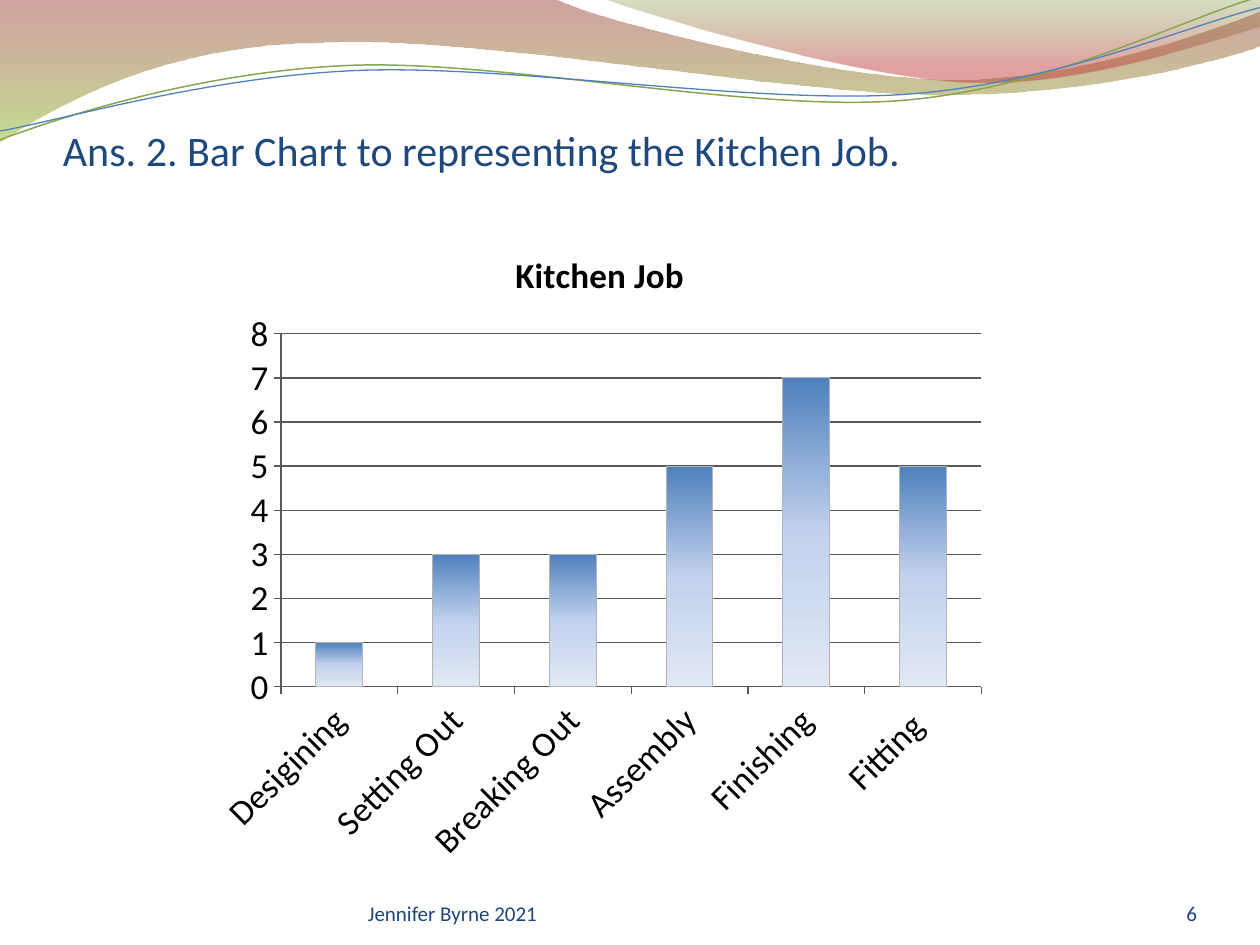
from lxml.etree import SubElement as Sub
from pptx import Presentation
from pptx.chart.data import CategoryChartData as Data
from pptx.dml.color import RGBColor as RGB
from pptx.enum.chart import XL_CHART_TYPE as Kind, XL_TICK_MARK as Tick
from pptx.enum.text import MSO_ANCHOR as Anchor, PP_ALIGN as Align
from pptx.oxml import parse_xml
from pptx.oxml.ns import nsdecls, qn
from pptx.util import Inches, Pt

FONT = "Calibri"
HUES = {
    "title": "1F497D", "foot": "1E4677", "text": "000000",
    "red": "973330", "lime": "95C238", "olive": "769537", "rose": "BE3330",
    "green": "89A54F", "blue": "4F81BD", "sky": "C2D1ED", "pale": "E1E8F5",
    "grid": "595959", "edge": "B3B3B3",
}
JOBS = {"Desigining": 1, "Setting Out": 3, "Breaking Out": 3,
        "Assembly": 5, "Finishing": 7, "Fitting ": 5}
BANDS = [
    ([(0, -0.01), (4.4, -0.01), (4.76, 0.17, 6.64, 0.63, 7.58, 0.63),
      (8.53, 0.63, 9.58, 0.26, 10, 0.09), (10.01, 0.36),
      (9.83, 0.44, 8.7, 0.76, 7.46, 0.75),
      (6.22, 0.75, 3.82, 0.28, 2.57, 0.34),
      (1.29, 0.35, 0.46, 0.83, -0.01, 1.13), (0, -0.01)],
     [(0, "red", 45), (100, "lime", 55)]),
    ([(4.79, -0.01), (5.09, 0.11, 6.82, 0.62, 7.69, 0.65),
      (8.56, 0.69, 9.61, 0.32, 10, 0.21), (10, 0), (4.79, -0.01)],
     [(0, "olive", 30), (80, "rose", 45)]),
]
WAVES = [
    ([(0, 1.11), (0.48, 0.93, 1.58, 0.57, 2.77, 0.52),
      (3.95, 0.47, 5.93, 0.89, 7.13, 0.8),
      (8.33, 0.71, 9.38, 0.15, 9.98, -0.02)], "green", 0.85),
    ([(0, 1.04), (0.47, 0.96, 1.64, 0.61, 2.83, 0.56),
      (4.03, 0.51, 5.97, 0.83, 7.17, 0.75),
      (8.36, 0.67, 9.41, 0.21, 10, 0.06)], "blue", 0.75),
]
CHART = (1.61, 1.78, 6.3, 5.17)
PLOT = (2.23, 2.65, 5.56, 2.8)


def hue(name):
    return RGB.from_string(HUES[name])


def style(font, size, name, bold=False):
    font.name, font.size, font.bold = FONT, Pt(size), bold
    font.color.rgb = hue(name)


def shade(fill, props, stops):
    fill.background()
    grad = parse_xml(f'<a:gradFill {nsdecls("a")} rotWithShape="1"/>')
    row = Sub(grad, qn("a:gsLst"))
    for pos, name, alpha in stops:
        stop = Sub(row, qn("a:gs"), pos=str(pos * 1000))
        tone = Sub(stop, qn("a:srgbClr"), val=HUES[name])
        if alpha < 100:
            Sub(tone, qn("a:alpha"), val=str(alpha * 1000))
    Sub(grad, qn("a:lin"), ang="5400000", scaled="0")
    props.replace(props.find(qn("a:noFill")), grad)


def add_curve(slide, steps, close=False):
    ends = [(Inches(s[-2]), Inches(s[-1])) for s in steps]
    pen = slide.shapes.build_freeform(*ends[0])
    pen.add_line_segments(ends[1:], close=close)
    shape = pen.convert_to_shape()
    shape.shadow.inherit = False
    lines = list(shape._element.spPr.iter(qn("a:lnTo")))
    for line, step in zip(lines, steps[1:]):
        if len(step) == 6:
            bend = parse_xml(f'<a:cubicBezTo {nsdecls("a")}/>')
            for x, y in zip(step[::2], step[1::2]):
                Sub(bend, qn("a:pt"), x=str(Inches(x) - shape.left),
                    y=str(Inches(y) - shape.top))
            line.getparent().replace(line, bend)
    return shape


def add_band(slide, steps, stops):
    shape = add_curve(slide, steps, True)
    shape.line.fill.background()
    shade(shape.fill, shape._element.spPr, stops)


def add_wave(slide, steps, name, width):
    shape = add_curve(slide, steps)
    shape.fill.background()
    shape.line.color.rgb = hue(name)
    shape.line.width = Pt(width)


def add_text(slide, box, text, size, name, align=Align.LEFT, top=0):
    frame = slide.shapes.add_textbox(*map(Inches, box)).text_frame
    frame.word_wrap = True
    frame.vertical_anchor = Anchor.BOTTOM
    frame.margin_left = frame.margin_right = frame.margin_bottom = 0
    frame.margin_top = Inches(top)
    para = frame.paragraphs[0]
    para.alignment = align
    run = para.add_run()
    run.text = text
    style(run.font, size, name)


def set_axis(axis):
    axis.major_tick_mark, axis.minor_tick_mark = Tick.OUTSIDE, Tick.NONE
    axis.format.line.color.rgb = hue("grid")
    style(axis.tick_labels.font, 20, "text")


def place_plot(chart):
    area = chart._chartSpace.chart.plotArea
    for old in area.findall(qn("c:layout")):
        area.remove(old)
    layout = parse_xml(f'<c:layout {nsdecls("c")}/>')
    hand = Sub(layout, qn("c:manualLayout"))
    left, top, wide, high = CHART
    x, y, w, h = PLOT
    for key, val in (("layoutTarget", "inner"),
                     ("xMode", "edge"), ("yMode", "edge"),
                     ("x", (x - left) / wide), ("y", (y - top) / high),
                     ("w", w / wide), ("h", h / high)):
        Sub(hand, qn(f"c:{key}"), val=str(val))
    area.insert(0, layout)


def add_bars(slide):
    data = Data()
    data.categories = list(JOBS)
    data.add_series("Series 1", list(JOBS.values()))
    chart = slide.shapes.add_chart(
        Kind.COLUMN_CLUSTERED, *map(Inches, CHART), data).chart
    style(chart.font, 10, "text")
    chart.has_legend = False
    chart.has_title = True
    para = chart.chart_title.text_frame.paragraphs[0]
    style(para.font, 20, "text", True)
    run = para.add_run()
    run.text = "Kitchen Job"
    style(run.font, 20, "text", True)
    cats, vals = chart.category_axis, chart.value_axis
    set_axis(cats)
    set_axis(vals)
    cats._element.txPr.bodyPr.set("rot", "-2700000")
    vals.minimum_scale, vals.maximum_scale, vals.major_unit = 0, 8, 1
    vals.has_major_gridlines = True
    vals.major_gridlines.format.line.color.rgb = hue("grid")
    plot = chart.plots[0]
    plot.gap_width, plot.vary_by_categories = 150, False
    bars = plot.series[0]
    shade(bars.format.fill, bars._element.get_or_add_spPr(),
          [(0, "blue", 100), (50, "sky", 100), (100, "pale", 100)])
    bars.format.line.color.rgb = hue("edge")
    place_plot(chart)


def main():
    deck = Presentation()
    deck.slide_width, deck.slide_height = Inches(10), Inches(7.5)
    slide = deck.slides.add_slide(deck.slide_layouts[6])
    for band in BANDS:
        add_band(slide, *band)
    for wave in WAVES:
        add_wave(slide, *wave)
    add_text(slide, (0.5, 0.77, 9, 0.62),
             "Ans. 2. Bar Chart to representing the Kitchen Job.",
             24, "title", top=0.05)
    add_text(slide, (2.92, 6.95, 3.67, 0.4), "Jennifer Byrne 2021", 12, "foot")
    add_text(slide, (8.67, 6.95, 0.83, 0.4), "6", 12, "foot", Align.RIGHT)
    add_bars(slide)
    deck.save("out.pptx")


if __name__ == "__main__":
    main()
